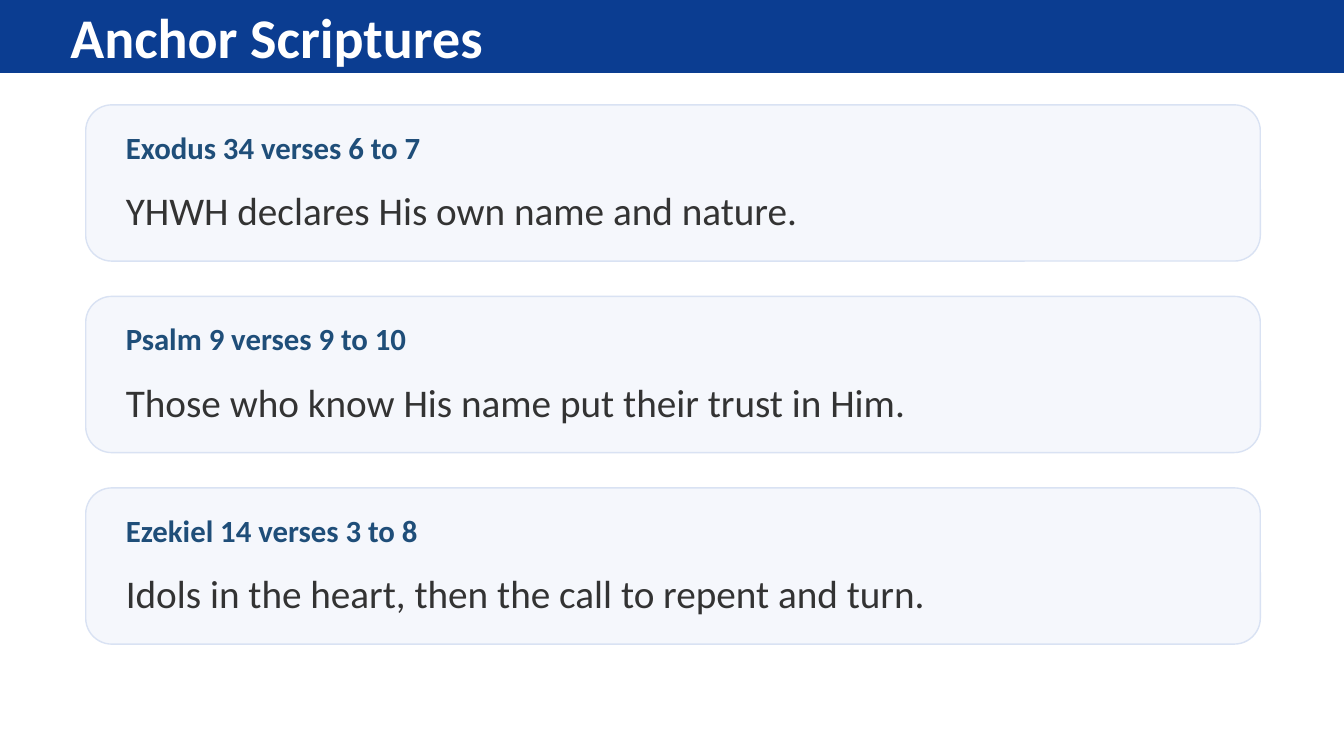
from pptx import Presentation
from pptx.dml.color import RGBColor
from pptx.enum import shapes, text
from pptx.util import Inches, Pt

BANNER_BLUE = RGBColor(0x0B, 0x3D, 0x91)
CARD_FILL = RGBColor(0xF5, 0xF7, 0xFC)
CARD_EDGE = RGBColor(0xD9, 0xE2, 0xF3)
WHITE = RGBColor(0xFF, 0xFF, 0xFF)
REFERENCE_BLUE = RGBColor(0x1F, 0x4E, 0x79)
BODY_GREY = RGBColor(0x33, 0x33, 0x33)

TITLE_FORMAT = {"size": Pt(40), "bold": True, "color": WHITE}
REFERENCE_FORMAT = {"size": Pt(22), "bold": True, "color": REFERENCE_BLUE}
SUMMARY_FORMAT = {"size": Pt(28), "bold": False, "color": BODY_GREY}

SCRIPTURES = [
    ("Exodus 34 verses 6 to 7", "YHWH declares His own name and nature."),
    ("Psalm 9 verses 9 to 10", "Those who know His name put their trust in Him."),
    ("Ezekiel 14 verses 3 to 8", "Idols in the heart, then the call to repent and turn."),
]


def add_panel(slide, preset, box, fill, edge):
    """Draw a filled, outlined shape in the box."""
    panel = slide.shapes.add_shape(preset, *map(Inches, box))
    panel.shadow.inherit = False
    panel.fill.solid()
    panel.fill.fore_color.rgb = fill
    panel.line.color.rgb = edge
    panel.line.width = Pt(1)


def add_label(slide, box, wording, formatting):
    """Write one vertically centred line of text in the box."""
    frame = slide.shapes.add_textbox(*map(Inches, box)).text_frame
    frame.word_wrap = True
    frame.vertical_anchor = text.MSO_ANCHOR.MIDDLE
    run = frame.paragraphs[0].add_run()
    run.text = wording
    run.font.name = "Calibri"
    for attribute, value in formatting.items():
        if attribute == "color":
            run.font.color.rgb = value
        else:
            setattr(run.font, attribute, value)


def add_banner(slide, box, title):
    """Place the title banner in the box."""
    left, top, width, height = box
    add_panel(slide, shapes.MSO_SHAPE.RECTANGLE, box, BANNER_BLUE, BANNER_BLUE)
    add_label(slide, (left + 0.6, top + 0.16, width - 1.13, height - 0.32), title, TITLE_FORMAT)


def add_scripture_card(slide, box, reference, summary):
    """Place a scripture reference and its summary on a card in the box."""
    left, top, width, height = box
    add_panel(slide, shapes.MSO_SHAPE.ROUNDED_RECTANGLE, box, CARD_FILL, CARD_EDGE)
    text_left, text_width = left + 0.3, width - 0.55
    add_label(slide, (text_left, top + 0.22, text_width, 0.4), reference, REFERENCE_FORMAT)
    add_label(slide, (text_left, top + 0.72, text_width, 0.65), summary, SUMMARY_FORMAT)


def main():
    """Build and save the scripture slide."""
    deck = Presentation()
    deck.slide_width, deck.slide_height = Inches(13.33), Inches(7.5)
    slide = deck.slides.add_slide(deck.slide_layouts[6])
    slide.background.fill.solid()
    slide.background.fill.fore_color.rgb = WHITE
    add_banner(slide, (0, 0, 13.33, 0.72), "Anchor Scriptures")
    for row, (reference, summary) in enumerate(SCRIPTURES):
        add_scripture_card(slide, (0.85, 1.04 + 1.9 * row, 11.65, 1.55), reference, summary)
    deck.save("out.pptx")


if __name__ == "__main__":
    main()
